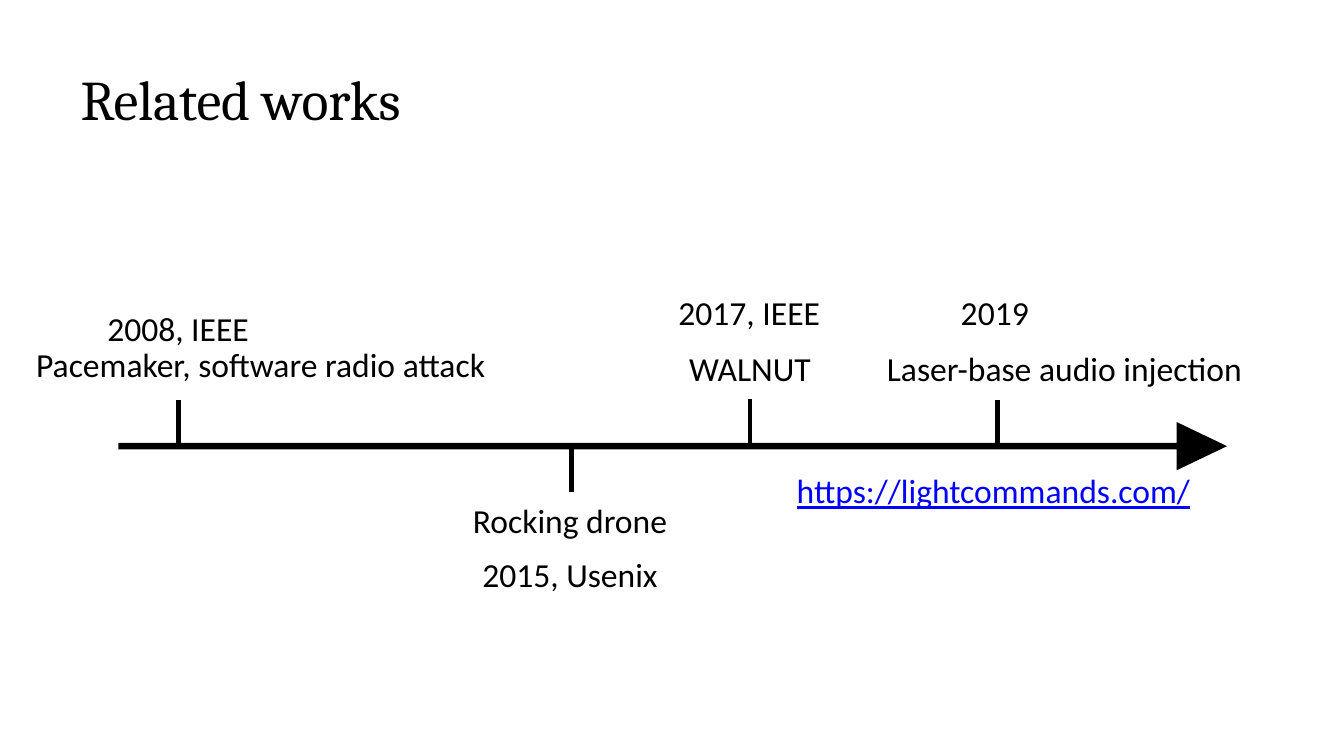
import pptx
import pptx.dml.color
import pptx.enum.shapes
import pptx.enum.text
import pptx.oxml.ns
import pptx.util
from lxml import etree
from pptx.util import Inches

BLACK = pptx.dml.color.RGBColor(0, 0, 0)
LINK_BLUE = pptx.dml.color.RGBColor(0, 0, 0xFF)

TICK_HEIGHT = 0.33
LABEL_HEIGHT = 0.4

# Centre and top of each tick on the timeline
TICKS = [(1.33, 2.98), (4.25, 3.33), (5.58, 2.97), (7.42, 2.98)]

# Text, left, top and width of each event label
LABELS = [
    ("2008, IEEE", 0.7, 2.24, 1.27),
    ("Pacemaker, software radio attack", 0.17, 2.51, 3.59),
    ("Rocking drone", 3.42, 3.67, 1.67),
    ("2015, Usenix", 3.49, 4.07, 1.52),
    ("2017, IEEE", 4.95, 2.12, 1.27),
    ("WALNUT", 5.03, 2.54, 1.11),
    ("2019", 7.05, 2.12, 0.71),
    ("Laser-base audio injection", 6.5, 2.54, 2.88),
]


def set_font(paragraph, name, size, color):
    paragraph.font.name = name
    paragraph.font.size = pptx.util.Pt(size)
    paragraph.font.color.rgb = color


def set_title(slide, text):
    title = slide.shapes.title
    title.left, title.top = Inches(0.59), Inches(0.47)
    title.width, title.height = Inches(3.11), Inches(0.51)
    frame = title.text_frame
    frame.text = text
    frame.margin_left = frame.margin_right = frame.margin_bottom = 0
    frame.margin_top = Inches(0.01)
    frame.vertical_anchor = pptx.enum.text.MSO_ANCHOR.TOP
    frame.auto_size = pptx.enum.text.MSO_AUTO_SIZE.SHAPE_TO_FIT_TEXT
    paragraph = frame.paragraphs[0]
    paragraph.alignment = pptx.enum.text.PP_ALIGN.LEFT
    # Slightly tightened letters, starting 0.01 inch in
    paragraph._p.get_or_add_pPr().set("marL", str(Inches(0.01)))
    paragraph.runs[0]._r.get_or_add_rPr().set("spc", "-10")
    set_font(paragraph, "Cambria", 30, BLACK)


def add_time_axis(slide):
    arrow = slide.shapes.add_shape(
        pptx.enum.shapes.MSO_SHAPE.RIGHT_ARROW,
        Inches(0.88), Inches(3.14), Inches(8.25), Inches(0.36))
    arrow.adjustments[0] = 0.136
    arrow.adjustments[1] = 1.044
    arrow.fill.solid()
    arrow.fill.fore_color.rgb = BLACK
    arrow.line.fill.background()
    arrow.shadow.inherit = False


def add_tick(slide, center, top):
    tick = slide.shapes.add_connector(
        pptx.enum.shapes.MSO_CONNECTOR.STRAIGHT,
        Inches(center), Inches(top), Inches(center), Inches(top + TICK_HEIGHT))
    tick.line.color.rgb = BLACK
    tick.line.width = pptx.util.Pt(2.5)
    # An empty effect list removes the theme shadow
    etree.SubElement(tick._element.spPr, pptx.oxml.ns.qn("a:effectLst"))


def add_label(slide, text, left, top, width, color=BLACK, underline=False):
    label = slide.shapes.add_textbox(
        Inches(left), Inches(top), Inches(width), Inches(LABEL_HEIGHT))
    frame = label.text_frame
    frame.text = text
    frame.word_wrap = False
    frame.auto_size = pptx.enum.text.MSO_AUTO_SIZE.SHAPE_TO_FIT_TEXT
    paragraph = frame.paragraphs[0]
    set_font(paragraph, "Calibri", 18, color)
    if underline:
        paragraph.font.underline = True


def main():
    presentation = pptx.Presentation()
    # Widescreen, 16 by 9
    presentation.slide_width = Inches(10)
    presentation.slide_height = Inches(10) * 9 // 16
    slide = presentation.slides.add_slide(presentation.slide_layouts[5])

    set_title(slide, "Related works")

    # Timeline
    add_time_axis(slide)
    for center, top in TICKS:
        add_tick(slide, center, top)

    # Events and web address
    for text, left, top, width in LABELS:
        add_label(slide, text, left, top, width)
    add_label(slide, "https://lightcommands.com/", 5.83, 3.45, 3.17,
              color=LINK_BLUE, underline=True)

    presentation.save("out.pptx")


if __name__ == "__main__":
    main()
